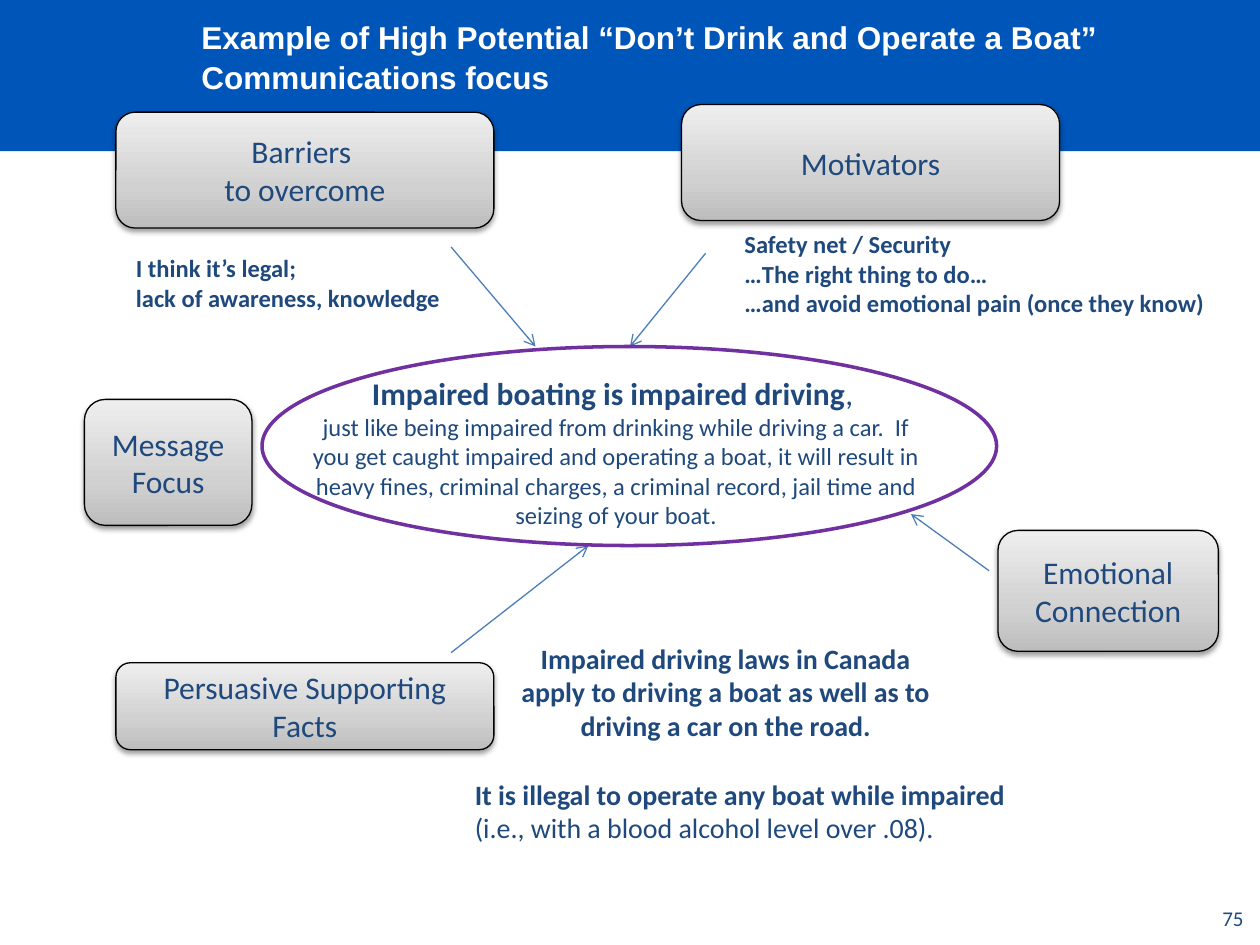
from lxml.etree import SubElement
from pptx import Presentation
from pptx.dml.color import RGBColor
from pptx.enum.shapes import MSO_CONNECTOR, MSO_SHAPE
from pptx.enum.text import MSO_ANCHOR, PP_ALIGN
from pptx.oxml import parse_xml
from pptx.oxml.ns import nsdecls, qn
from pptx.util import Emu, Pt

PX = 9144  # 100 px to the inch
BLUE = RGBColor(0x00, 0x55, 0xB9)
NAVY = RGBColor(0x1F, 0x49, 0x7D)
STEEL = RGBColor(0x4B, 0x7E, 0xBC)
PURPLE = RGBColor(0x70, 0x30, 0xA0)
BLACK = RGBColor(0, 0, 0)
WHITE = RGBColor(255, 255, 255)
GREYS = [(0, "BDBDBD"), (35, "D1D1D1"), (100, "EEEEEE")]


def px(*nums):
    return [Emu(num * PX) for num in nums]


def style(para, size, color=NAVY, bold=False, align=PP_ALIGN.LEFT, face="Calibri"):
    para.alignment = align
    font = para.font
    font.name, font.size, font.bold = face, Pt(size), bold
    font.color.rgb = color


def note(slide, box, lines, size, anchor=MSO_ANCHOR.TOP, **look):
    """Text box with one paragraph per entry; returns its frame."""
    frame = slide.shapes.add_textbox(*px(*box)).text_frame
    frame.word_wrap = True
    frame.vertical_anchor = anchor
    frame.text = "\n".join(lines)
    for para in frame.paragraphs:
        style(para, size, **look)
    return frame


def header(slide, box):
    left, top, width, height = box
    band = slide.shapes.add_shape(MSO_SHAPE.RECTANGLE, *px(*box))
    band.shadow.inherit = False
    band.fill.solid()
    band.fill.fore_color.rgb = BLUE
    band.line.fill.background()
    title = "Example of High Potential “Don’t Drink and Operate a Boat” Communications focus"
    frame = note(slide, (left + 150, top + 14, width - 150, 67), [title], 18,
                 MSO_ANCHOR.MIDDLE, color=WHITE, bold=True, face="Arial")
    frame.paragraphs[0].line_spacing = 1.05


def label(slide, box, lines):
    """Grey rounded box with a gradient and a soft shadow."""
    shape = slide.shapes.add_shape(MSO_SHAPE.ROUNDED_RECTANGLE, *px(*box))
    shape.line.color.rgb = BLACK
    shape.line.width = Pt(0.75)
    props = shape._element.spPr
    stops = "".join(f'<a:gs pos="{pos * 1000}"><a:srgbClr val="{grey}"/></a:gs>'
                    for pos, grey in GREYS)
    props.find(qn("a:prstGeom")).addnext(parse_xml(
        f'<a:gradFill {nsdecls("a")} rotWithShape="1"><a:gsLst>{stops}</a:gsLst>'
        '<a:lin ang="16200000" scaled="1"/></a:gradFill>'))
    props.append(parse_xml(
        f'<a:effectLst {nsdecls("a")}><a:outerShdw blurRad="39370" dist="20320" '
        'dir="5400000" rotWithShape="0"><a:srgbClr val="000000">'
        '<a:alpha val="38000"/></a:srgbClr></a:outerShdw></a:effectLst>'))
    frame = shape.text_frame
    frame.word_wrap = True
    frame.vertical_anchor = MSO_ANCHOR.MIDDLE
    frame.text = "\n".join(lines)
    for para in frame.paragraphs:
        style(para, 18, align=PP_ALIGN.CENTER)


def focus(slide, box):
    """Central message inside its oval."""
    left, top, width, height = box
    frame = note(slide, (left + 25, top + 17, width - 71, height - 23), [""], 14,
                 align=PP_ALIGN.CENTER)
    para = frame.paragraphs[0]
    for text, bold in [("Impaired boating is impaired driving", True), (", ", False)]:
        run = para.add_run()
        run.text = text
        run.font.size, run.font.bold = Pt(18), bold
    para.add_line_break()
    para.add_run().text = (
        "just like being impaired from drinking while driving a car.  If you get caught "
        "impaired and operating a boat, it will result in heavy fines, criminal charges, "
        "a criminal record, jail time and seizing of your boat.")
    oval = slide.shapes.add_shape(MSO_SHAPE.OVAL, *px(*box))
    oval.shadow.inherit = False
    oval.fill.background()
    oval.line.color.rgb = PURPLE
    oval.line.width = Pt(2)


def arrow(slide, ends):
    link = slide.shapes.add_connector(MSO_CONNECTOR.STRAIGHT, *px(*ends))
    link.line.color.rgb = STEEL
    link.line.width = Pt(0.75)
    SubElement(link.line._get_or_add_ln(), qn("a:tailEnd"), type="arrow")
    SubElement(link._element.spPr, qn("a:effectLst"))


def facts(slide, box):
    """Legal facts: a centred claim above a left-aligned one."""
    left, top, width, height = box
    note(slide, (left + 31, top, 356, 91),
         ["Impaired driving laws in Canada apply to driving a boat as well as to "
          "driving a car on the road."], 16, bold=True, align=PP_ALIGN.CENTER)
    frame = note(slide, (left, top + 108, width, 64), [""], 16)
    para = frame.paragraphs[0]
    run = para.add_run()
    run.text = "It is illegal to operate any boat while impaired "
    run.font.bold = True
    para.add_line_break()
    para.add_run().text = "(i.e., with a blood alcohol level over .08)."


def number(slide, box):
    frame = note(slide, box, ["75"], 12, MSO_ANCHOR.MIDDLE, align=PP_ALIGN.RIGHT)
    frame.margin_left, frame.margin_top, frame.margin_right, frame.margin_bottom = px(4, 4, 12, 4)


def main():
    deck = Presentation()
    deck.slide_width, deck.slide_height = px(1000, 750)
    slide = deck.slides.add_slide(deck.slide_layouts[6])

    header(slide, (0, -3, 1000, 123))

    # Arrows towards the message
    for ends in [(358, 518, 467, 433), (358, 196, 425, 275),
                 (560, 201, 500, 275), (785, 453, 723, 408)]:
        arrow(slide, ends)

    # Topic boxes
    for box, lines in [
        ((792, 421, 175, 96), ["Emotional Connection"]),
        ((67, 317, 133, 100), ["Message Focus"]),
        ((92, 89, 300, 92), ["Barriers ", "to overcome"]),
        ((541, 83, 300, 92), ["Motivators"]),
        ((92, 526, 300, 69), ["Persuasive Supporting Facts"]),
    ]:
        label(slide, box, lines)

    # Notes on barriers and motivators
    note(slide, (98, 196, 315, 57),
         ["I think it’s legal; ", "lack of awareness, knowledge"], 14, bold=True)
    note(slide, (581, 177, 391, 81),
         ["Safety net / Security", "…The right thing to do…",
          "…and avoid emotional pain (once they know)"], 14, bold=True)

    facts(slide, (367, 504, 453, 172))
    focus(slide, (208, 275, 583, 158))
    number(slide, (936, 709, 63, 40))
    deck.save("out.pptx")


if __name__ == "__main__":
    main()
